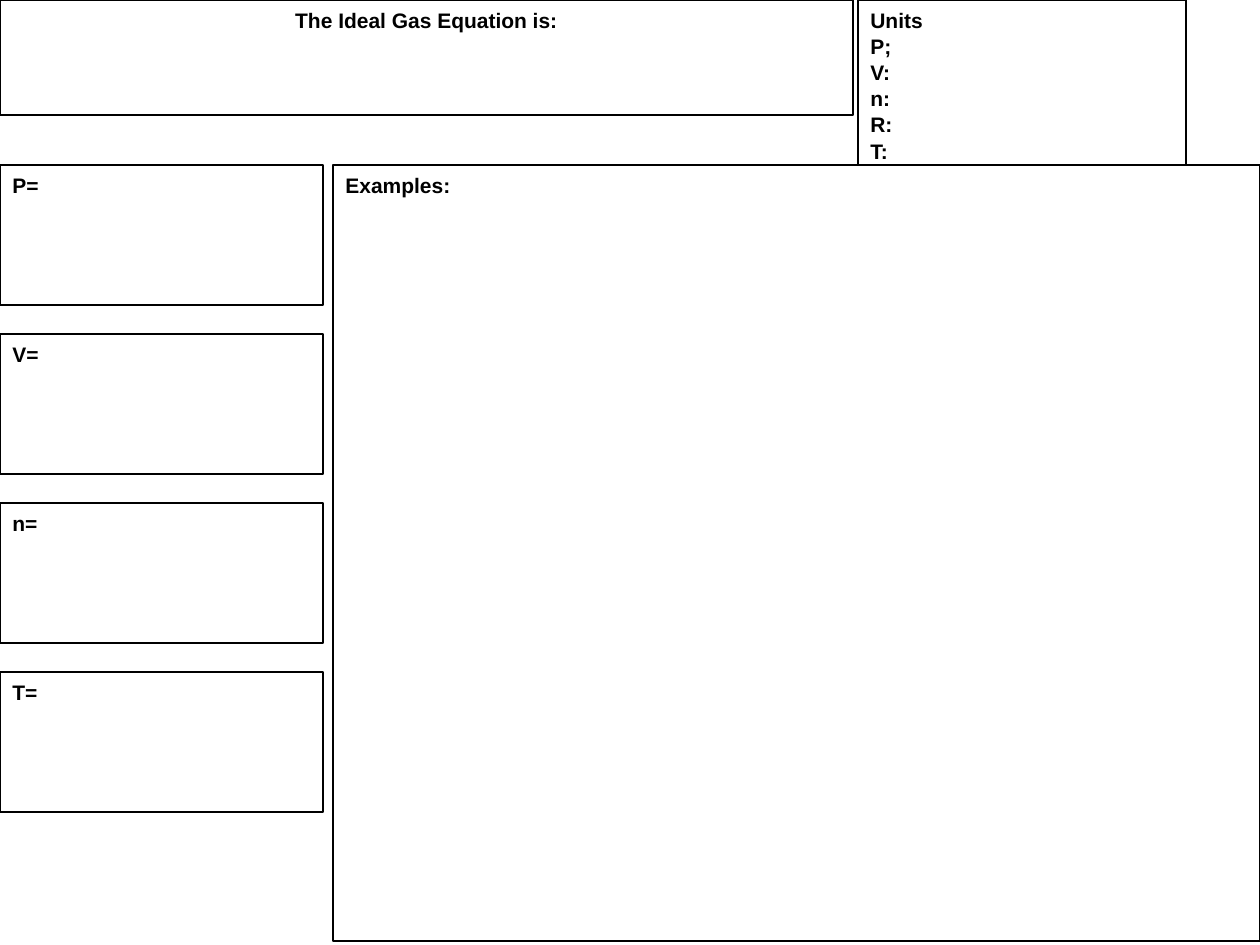
from pptx import Presentation
from pptx.dml.color import RGBColor
from pptx.enum.text import MSO_ANCHOR, PP_ALIGN
from pptx.util import Emu, Pt

PX = 914400 / 126
COLORS = {"ink": "000000"}
FONT = "Arial"

TITLE = "The Ideal Gas Equation is:"
UNITS = ["Units", "P;", "V:", "n:", "R:", "T:"]
UNKNOWNS = ["P=", "V=", "n=", "T="]
EXAMPLES = "Examples:"

SLIDE_W, SLIDE_H = 1260, 945
BODY_TOP = 165
UNKNOWN_W, UNKNOWN_H, UNKNOWN_STEP = 323, 140, 169
EXAMPLES_LEFT, EXAMPLES_H = 333, 776


def px(n):
    return Emu(round(n * PX))


def add_box(slide, lines, left, top, width, height, align=PP_ALIGN.LEFT,
            size=12, bold=True, color="ink", spacing=1.04):
    """Add an outlined text box with one paragraph per line."""
    s = slide.shapes.add_textbox(px(left), px(top), px(width), px(height))
    s.line.color.rgb = RGBColor.from_string(COLORS["ink"])
    s.line.width = Pt(0.75)
    tf = s.text_frame
    tf.word_wrap = True
    tf.vertical_anchor = MSO_ANCHOR.TOP
    for i, line in enumerate(lines):
        p = tf.add_paragraph() if i else tf.paragraphs[0]
        p.alignment = align
        p.line_spacing = spacing
        r = p.add_run()
        r.text = line
        r.font.name = FONT
        r.font.size = Pt(size)
        r.font.bold = bold
        r.font.color.rgb = RGBColor.from_string(COLORS[color])
    return s


def main():
    prs = Presentation()
    prs.slide_width, prs.slide_height = px(SLIDE_W), px(SLIDE_H)
    slide = prs.slides.add_slide(prs.slide_layouts[6])

    add_box(slide, [TITLE], 0, 0, 853, 115, align=PP_ALIGN.CENTER)
    add_box(slide, UNITS, 858, 0, 328, BODY_TOP)
    for i, label in enumerate(UNKNOWNS):
        add_box(slide, [label], 0, BODY_TOP + i * UNKNOWN_STEP,
                UNKNOWN_W, UNKNOWN_H)
    add_box(slide, [EXAMPLES], EXAMPLES_LEFT, BODY_TOP,
            SLIDE_W - EXAMPLES_LEFT, EXAMPLES_H)

    prs.save("out.pptx")


if __name__ == "__main__":
    main()
